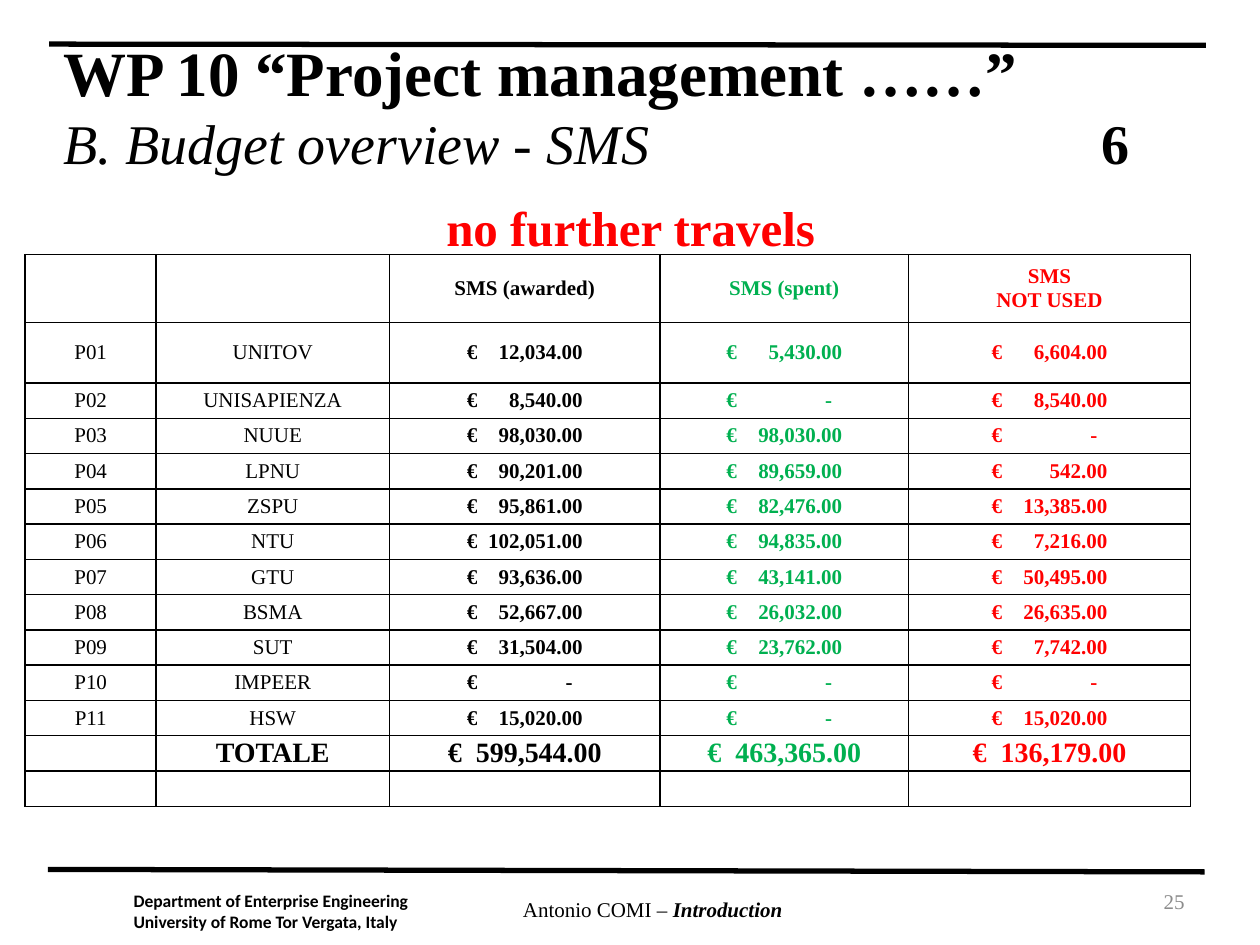
import copy
from dataclasses import dataclass, field
from typing import Any

import pptx
import pptx.dml.color
import pptx.enum.shapes
import pptx.enum.text
import pptx.oxml
import pptx.oxml.ns
import pptx.util

Inches = pptx.util.Inches
RGBColor = pptx.dml.color.RGBColor
Align = pptx.enum.text.PP_ALIGN
Anchor = pptx.enum.text.MSO_ANCHOR
qn = pptx.oxml.ns.qn

BLACK = RGBColor(0x00, 0x00, 0x00)
WHITE = RGBColor(0xFF, 0xFF, 0xFF)
GREEN = RGBColor(0x00, 0xB0, 0x50)
RED = RGBColor(0xFF, 0x00, 0x00)
GRAY = RGBColor(0x8C, 0x8C, 0x8C)
SERIF = "Times New Roman"
SLIDE_WIDTH, SLIDE_HEIGHT = 10, 7.5

COLUMN_WIDTHS = [1.04, 1.85, 2.15, 1.97, 2.24]
HEADER_HEIGHT, FIRST_ROW_HEIGHT, ROW_HEIGHT = 0.54, 0.48, 0.28
HEADERS = ["", "", "SMS (awarded)", "SMS (spent)", "SMS\nNOT USED"]
COLUMN_COLORS = [BLACK, BLACK, BLACK, GREEN, RED]


@dataclass
class Run:
    text: str
    size: float = 12
    color: RGBColor = BLACK
    bold: bool = False
    italic: bool = False
    name: str = SERIF


@dataclass
class TextBox:
    left: float
    top: float
    width: float
    height: float
    paragraphs: list[list[Run]]
    alignment: Any = Align.CENTER
    frame: dict[str, Any] = field(default_factory=dict)


@dataclass
class Partner:
    code: str
    name: str
    awarded: int
    spent: int


PARTNERS = [
    Partner("P01", "UNITOV", 12034, 5430),
    Partner("P02", "UNISAPIENZA", 8540, 0),
    Partner("P03", "NUUE", 98030, 98030),
    Partner("P04", "LPNU", 90201, 89659),
    Partner("P05", "ZSPU", 95861, 82476),
    Partner("P06", "NTU", 102051, 94835),
    Partner("P07", "GTU", 93636, 43141),
    Partner("P08", "BSMA", 52667, 26032),
    Partner("P09", "SUT", 31504, 23762),
    Partner("P10", "IMPEER", 0, 0),
    Partner("P11", "HSW", 15020, 0),
]
TOTAL = Partner("", "TOTALE", sum(p.awarded for p in PARTNERS), sum(p.spent for p in PARTNERS))

NO_MARGINS = dict.fromkeys(["margin_left", "margin_top", "margin_right", "margin_bottom"], 0)
TEXT_BOXES = [
    TextBox(1.06, 7.06, 2.58, 0.33, [
        [Run("Department of Enterprise Engineering", 10, bold=True, name="Calibri")],
        [Run("University of Rome Tor Vergata, Italy", 10, bold=True, name="Calibri")],
    ], Align.LEFT, NO_MARGINS),
    TextBox(3.19, 7.07, 3.98, 0.5, [
        [Run("Antonio COMI – "), Run("Introduction", bold=True, italic=True)]]),
    TextBox(7.17, 6.95, 2.33, 0.4, [[Run("25", color=GRAY)]], Align.RIGHT,
            {"vertical_anchor": Anchor.MIDDLE}),
    TextBox(0.2, 1.52, 9.61, 0.57, [[Run("no further travels", 28, RED, bold=True)]]),
]
RULES = [((0.38, 6.9), (9.56, 6.92)), ((0.39, 0.35), (9.57, 0.36))]


def set_all(target: Any, values: dict[str, Any]) -> None:
    for name, value in values.items():
        setattr(target, name, value)


def add_tab_stop(paragraph: Any, position: float, alignment: str) -> None:
    properties = paragraph._p.get_or_add_pPr()
    tabs = pptx.oxml.parse_xml(f'<a:tabLst {pptx.oxml.ns.nsdecls("a")}/>')
    tabs.append(tabs.makeelement(qn("a:tab"), {"pos": str(Inches(position)), "algn": alignment}))
    properties.append(tabs)


def write_runs(paragraph: Any, runs: list[Run]) -> None:
    """Write formatted runs; a newline in a run becomes a line break of the same format."""
    for item in runs:
        for index, line in enumerate(item.text.split("\n")):
            if index:
                paragraph.add_line_break()
                line_break = paragraph._p.findall(qn("a:br"))[-1]
                line_break.append(copy.deepcopy(run._r.rPr))
            if not line:
                continue
            run = paragraph.add_run()
            run.text = line
            set_all(run.font, {"size": pptx.util.Pt(item.size), "bold": item.bold,
                               "italic": item.italic, "name": item.name})
            run.font.color.rgb = item.color


def add_text_box(slide: Any, box: TextBox) -> None:
    shape = slide.shapes.add_textbox(*map(Inches, (box.left, box.top, box.width, box.height)))
    text_frame = shape.text_frame
    set_all(text_frame, {"word_wrap": True, **box.frame})
    for index, runs in enumerate(box.paragraphs):
        paragraph = text_frame.add_paragraph() if index else text_frame.paragraphs[0]
        paragraph.alignment = box.alignment
        write_runs(paragraph, runs)


def add_rule(slide: Any, start: tuple[float, float], end: tuple[float, float]) -> None:
    connector = slide.shapes.add_connector(
        pptx.enum.shapes.MSO_CONNECTOR.STRAIGHT, *map(Inches, start + end))
    connector.line.width = pptx.util.Pt(3)
    connector.line.color.rgb = BLACK
    properties = connector._element.spPr
    properties.append(properties.makeelement(qn("a:effectLst"), {}))


def fill_title(title: Any) -> None:
    set_all(title, {"left": Inches(0.4), "top": Inches(0.43),
                    "width": Inches(9.16), "height": Inches(0.8)})
    set_all(title.text_frame, {"vertical_anchor": Anchor.MIDDLE, "word_wrap": True,
                               "auto_size": pptx.enum.text.MSO_AUTO_SIZE.NONE})
    paragraph = title.text_frame.paragraphs[0]
    paragraph.alignment = Align.LEFT
    add_tab_stop(paragraph, 8.24, "l")
    write_runs(paragraph, [Run("WP 10 “Project management ……”\n", 36, bold=True),
                           Run("B. Budget overview - SMS\t", 32, italic=True),
                           Run("6", 32, bold=True)])


def format_cell(cell: Any) -> None:
    """Give the cell thin black borders, a white fill and no margins."""
    set_all(cell, {**NO_MARGINS, "vertical_anchor": Anchor.MIDDLE})
    properties = cell._tc.get_or_add_tcPr()
    for side in ("lnL", "lnR", "lnT", "lnB"):
        properties.append(pptx.oxml.parse_xml(
            f'<a:{side} {pptx.oxml.ns.nsdecls("a")} w="{pptx.util.Pt(1)}"><a:solidFill>'
            f'<a:srgbClr val="{BLACK}"/></a:solidFill></a:{side}>'))
    cell.fill.solid()
    cell.fill.fore_color.rgb = WHITE


def write_amount(cell: Any, amount: int, width: float, run: Run) -> None:
    """Set the euro sign left and the figure at a right tab, centred as a pair."""
    half = 0.61 if run.size > 12 else 0.46
    cell.margin_left = Inches(width / 2 - half)
    paragraph = cell.text_frame.paragraphs[0]
    paragraph.alignment = Align.LEFT
    add_tab_stop(paragraph, 2 * half if amount else 0.84, "r")
    run.text = f"€\t{amount:,.2f}" if amount else "€\t-"
    write_runs(paragraph, [run])


def add_budget_table(slide: Any) -> None:
    rows = [HEADERS] + [[p.code, p.name, p.awarded, p.spent, p.awarded - p.spent]
                        for p in PARTNERS + [TOTAL]] + [[""] * len(HEADERS)]
    heights = [HEADER_HEIGHT, FIRST_ROW_HEIGHT] + [ROW_HEIGHT] * (len(rows) - 2)
    table = slide.shapes.add_table(
        len(rows), len(HEADERS),
        *map(Inches, (0.2, 2.02, sum(COLUMN_WIDTHS), sum(heights)))).table
    set_all(table, {"first_row": False, "horz_banding": False})
    for column, width in zip(table.columns, COLUMN_WIDTHS):
        column.width = Inches(width)
    for row_index, (values, height) in enumerate(zip(rows, heights)):
        table.rows[row_index].height = Inches(height)
        is_total = values[1] == TOTAL.name
        for column_index, value in enumerate(values):
            cell = table.cell(row_index, column_index)
            format_cell(cell)
            paragraph = cell.text_frame.paragraphs[0]
            run = Run("", 16 if is_total else 12, COLUMN_COLORS[column_index],
                      bold=is_total or column_index > 1)
            if isinstance(value, int):
                write_amount(cell, value, COLUMN_WIDTHS[column_index], run)
            elif value:
                run.text = value
                paragraph.alignment = Align.CENTER
                write_runs(paragraph, [run])
            else:
                paragraph._p.append(paragraph._p.makeelement(qn("a:endParaRPr"), {"sz": "1200"}))


def main() -> None:
    presentation = pptx.Presentation()
    set_all(presentation, {"slide_width": Inches(SLIDE_WIDTH),
                           "slide_height": Inches(SLIDE_HEIGHT)})
    slide = presentation.slides.add_slide(presentation.slide_layouts[5])
    for start, end in RULES:
        add_rule(slide, start, end)
    add_budget_table(slide)
    fill_title(slide.shapes.title)
    for box in TEXT_BOXES:
        add_text_box(slide, box)
    presentation.save("out.pptx")


if __name__ == "__main__":
    main()
